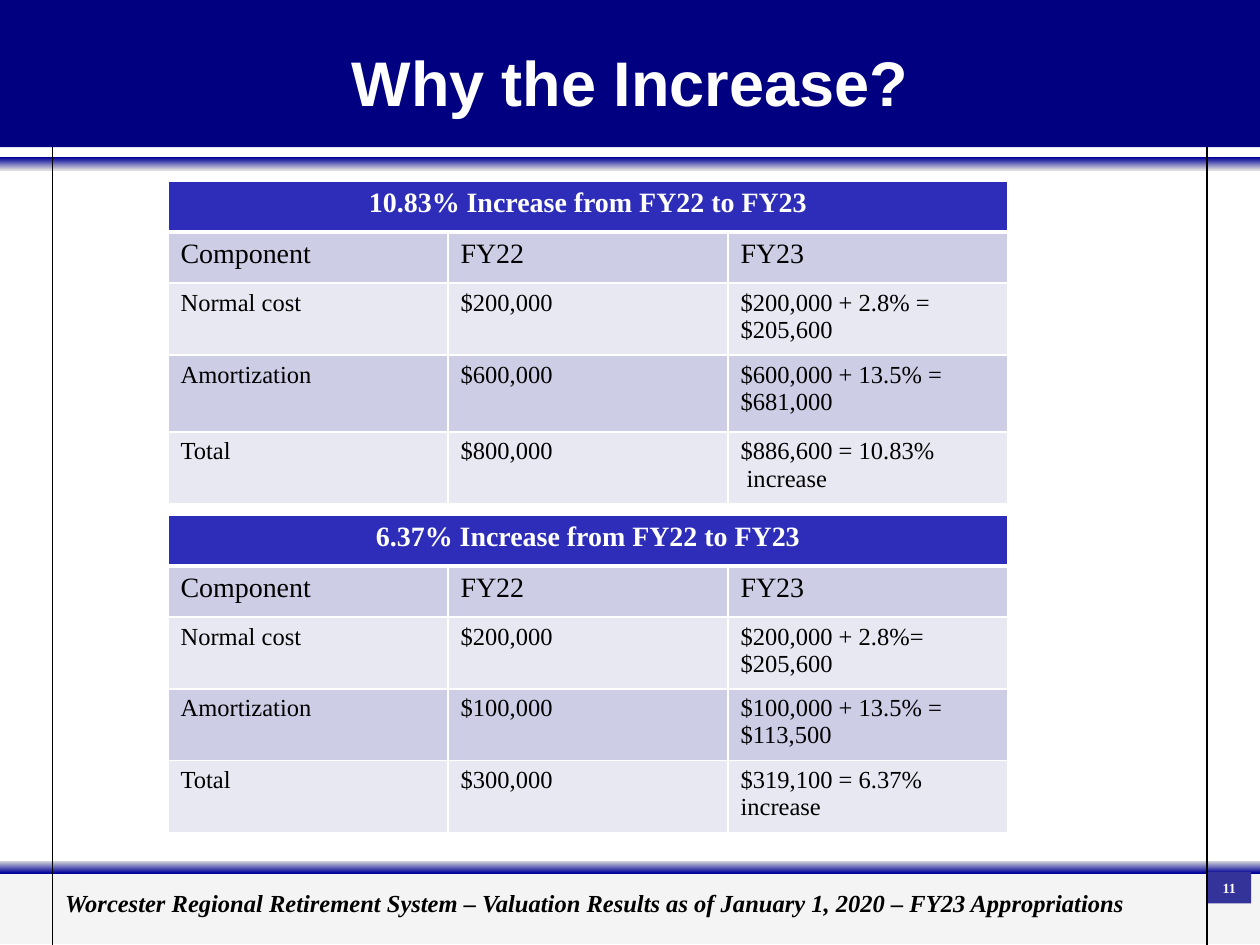
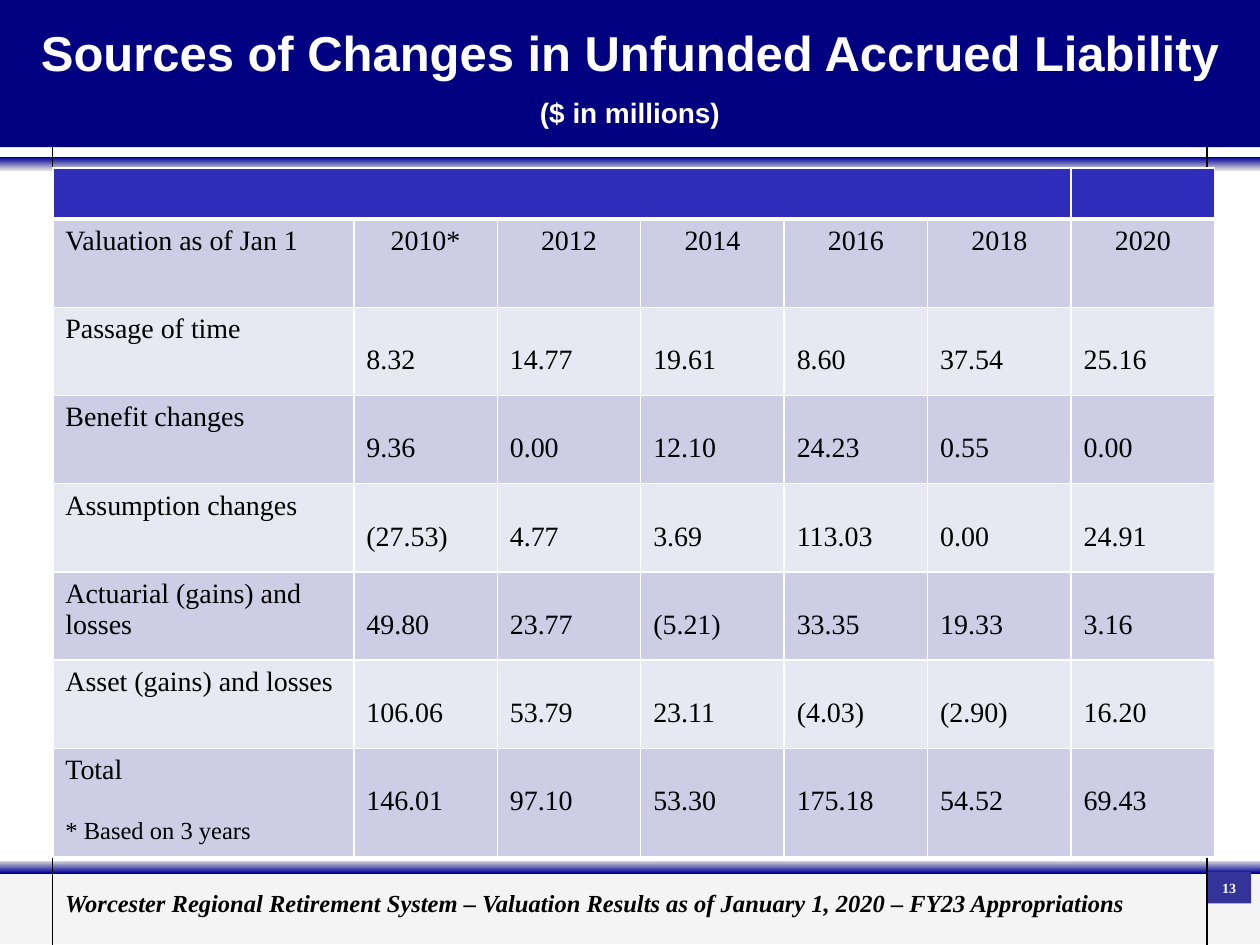
from dataclasses import dataclass

from lxml import etree
from pptx import Presentation
from pptx.dml.color import RGBColor
from pptx.enum.shapes import MSO_CONNECTOR, MSO_SHAPE
from pptx.enum.text import MSO_ANCHOR, MSO_AUTO_SIZE, PP_ALIGN
from pptx.oxml.ns import qn
from pptx.util import Pt

RECTANGLE = MSO_SHAPE.RECTANGLE
STRAIGHT = MSO_CONNECTOR.STRAIGHT
TOP, MIDDLE = MSO_ANCHOR.TOP, MSO_ANCHOR.MIDDLE
NO_FIT = MSO_AUTO_SIZE.NONE
LEFT, CENTER = PP_ALIGN.LEFT, PP_ALIGN.CENTER


@dataclass(frozen=True)
class Theme:
    title_font: str = "Arial"
    body_font: str = "Times New Roman"
    navy: str = "000080"
    blue: str = "000099"
    silver: str = "DDDDDD"
    footer_grey: str = "EAEAEA"
    number_box: str = "333399"
    header: str = "2D2DB9"
    dark_row: str = "CDCDE6"
    light_row: str = "E8E8F3"
    black: str = "000000"
    white: str = "FFFFFF"
    heading: int = 16
    body: int = 14
    page_number: int = 8


THEME = Theme()
WIDTH, HEIGHT = 720, 540
HEADER_HEIGHT = 84.2
MARGIN_LINES = (30.2, 689.8)
DECIMAL_TAB = 54
FOOTER = ("Worcester Regional Retirement System – Valuation Results as of "
          "January 1, 2020 – FY23 Appropriations")


def write(paragraph, text, size, color=THEME.black, font=THEME.body_font,
          bold=False, italic=False, align=LEFT):
    paragraph.alignment = align
    run = paragraph.add_run()
    run.text = text
    run.font.name = font
    run.font.size = Pt(size)
    run.font.bold = bold
    run.font.italic = italic
    run.font.color.rgb = RGBColor.from_string(color)


def add_grid(slide, left, top, widths, heights):
    grid = slide.shapes.add_table(len(heights), len(widths), Pt(left), Pt(top),
                                  Pt(sum(widths)), Pt(sum(heights))).table
    for column, width in zip(grid.columns, widths):
        column.width = Pt(width)
    for row_index, height in enumerate(heights):
        grid.rows[row_index].height = Pt(height)
        fill = THEME.dark_row if row_index % 2 else THEME.light_row
        edges = {"a:lnL": 1, "a:lnR": 1,
                 "a:lnT": 3 if row_index == 1 else 1,
                 "a:lnB": 3 if row_index == 0 else 1}
        for cell in grid.rows[row_index].cells:
            properties = cell._tc.get_or_add_tcPr()
            for tag, weight in edges.items():
                edge = etree.SubElement(properties, qn(tag), w=str(Pt(weight)))
                solid = etree.SubElement(edge, qn("a:solidFill"))
                etree.SubElement(solid, qn("a:srgbClr"), val=THEME.white)
            cell.fill.solid()
            cell.fill.fore_color.rgb = RGBColor.from_string(
                fill if row_index else THEME.header)
    return grid


prs = Presentation()
prs.slide_width, prs.slide_height = Pt(WIDTH), Pt(HEIGHT)
title_only = prs.slide_layouts[5]

pages = [
    ("11", 18, 51.1, [("Why the Increase?", 36)]),
    ("13", 5.8, 70.6, [("Sources of Changes in Unfunded Accrued Liability", 28),
                       ("($ in millions)", THEME.heading)]),
]
bands = [
    (0, 90, WIDTH, 7.2, (THEME.blue, THEME.silver)),
    (0, 497.5, WIDTH, 41.8, (THEME.footer_grey,)),
    (0, 491.8, WIDTH, 7.2, (THEME.silver, THEME.blue)),
    (0, 0, WIDTH, HEADER_HEIGHT, (THEME.navy,)),
    (MARGIN_LINES[1], 498.2, 25.2, 18, (THEME.number_box,)),
]

slides = []
for page_number, title_top, title_height, title_lines in pages:
    slide = prs.slides.add_slide(title_only)
    slides.append(slide)

    for left, top, width, height, colors in bands:
        band = slide.shapes.add_shape(RECTANGLE, Pt(left), Pt(top), Pt(width), Pt(height))
        band.shadow.inherit = False
        band.line.fill.background()
        if len(colors) == 2:
            band.fill.gradient()
            band.fill.gradient_angle = 270
            for stop, color in zip(band.fill.gradient_stops, colors):
                stop.color.rgb = RGBColor.from_string(color)
        else:
            band.fill.solid()
            band.fill.fore_color.rgb = RGBColor.from_string(colors[0])
        if colors == (THEME.footer_grey,):
            tint = band._element.spPr.find(".//" + qn("a:srgbClr"))
            etree.SubElement(tint, qn("a:alpha"), val="50000")
        if colors == (THEME.number_box,):
            band.text_frame.vertical_anchor = MIDDLE
            write(band.text_frame.paragraphs[0], page_number, THEME.page_number,
                  THEME.white, bold=True, align=CENTER)

    for x in MARGIN_LINES:
        margin_line = slide.shapes.add_connector(STRAIGHT, Pt(x), Pt(HEADER_HEIGHT),
                                                 Pt(x), Pt(HEIGHT))
        margin_line.line.width = Pt(0.75)
        margin_line.line.color.rgb = RGBColor.from_string(THEME.black)
        etree.SubElement(margin_line._element.spPr, qn("a:effectLst"))

    footer = slide.shapes.add_textbox(Pt(MARGIN_LINES[0]), Pt(504), Pt(648), Pt(24.5))
    footer.text_frame.word_wrap = True
    write(footer.text_frame.paragraphs[0], FOOTER, THEME.body, bold=True, italic=True)

    title = slide.shapes.title
    title.element.getparent().append(title.element)
    title.left, title.top = Pt(0), Pt(title_top)
    title.width, title.height = Pt(WIDTH), Pt(title_height)
    title_frame = title.text_frame
    title_frame.auto_size = NO_FIT
    title_frame.vertical_anchor = TOP
    title_frame.margin_top = Pt(7)
    for index, (text, size) in enumerate(title_lines):
        line = title_frame.add_paragraph() if index else title_frame.paragraphs[0]
        line.space_before = Pt(8 if index else 0)
        write(line, text, size, THEME.white, THEME.title_font, bold=True, align=CENTER)

increase_slide, liability_slide = slides

scenarios = [
    (103.4, 44, "10.83% Increase from FY22 to FY23", [
        ("Normal cost", "$200,000", "$200,000 + 2.8% = $205,600"),
        ("Amortization", "$600,000", "$600,000 + 13.5% = $681,000"),
        ("Total", "$800,000", "$886,600 = 10.83%\n increase")]),
    (294.2, 41, "6.37% Increase from FY22 to FY23", [
        ("Normal cost", "$200,000", "$200,000 + 2.8%= $205,600"),
        ("Amortization", "$100,000", "$100,000 + 13.5% = $113,500"),
        ("Total", "$300,000", "$319,100 = 6.37% increase")]),
]
for top, amortization_height, heading, components in scenarios:
    scenario = add_grid(increase_slide, 96, top, [160] * 3,
                        [29.2, 29.2, 41, amortization_height, 41])
    scenario.cell(0, 0).merge(scenario.cell(0, 2))
    write(scenario.cell(0, 0).text_frame.paragraphs[0], heading, THEME.heading,
          THEME.white, bold=True, align=CENTER)
    for row_index, row in enumerate([("Component", "FY22", "FY23")] + components, 1):
        size = THEME.heading if row_index == 1 else THEME.body
        for column_index, entry in enumerate(row):
            frame = scenario.cell(row_index, column_index).text_frame
            for index, text in enumerate(entry.split("\n")):
                paragraph = frame.add_paragraph() if index else frame.paragraphs[0]
                write(paragraph, text, size)

liability_rows = [
    ("Valuation as of Jan 1", "2010*", "2012", "2014", "2016", "2018", "2020"),
    ("Passage of time", "8.32", "14.77", "19.61", "8.60", "37.54", "25.16"),
    ("Benefit changes", "9.36", "0.00", "12.10", "24.23", "0.55", "0.00"),
    ("Assumption changes", "(27.53)", "4.77", "3.69", "113.03", "0.00", "24.91"),
    ("Actuarial (gains) and losses", "49.80", "23.77", "(5.21)", "33.35", "19.33", "3.16"),
    ("Asset (gains) and losses", "106.06", "53.79", "23.11", "(4.03)", "(2.90)", "16.20"),
    ("Total", "146.01", "97.10", "53.30", "175.18", "54.52", "69.43"),
]
liability = add_grid(liability_slide, MARGIN_LINES[0], 96, [172] + [82] * 6,
                     [29.2] + [50.4] * 6 + [62.2])
liability.cell(0, 0).merge(liability.cell(0, 5))
for row_index, row in enumerate(liability_rows, 1):
    for column_index, entry in enumerate(row):
        paragraph = liability.cell(row_index, column_index).text_frame.paragraphs[0]
        if column_index == 0:
            write(paragraph, entry, THEME.heading)
        elif row_index == 1:
            write(paragraph, entry, THEME.heading, align=CENTER)
        else:
            write(paragraph, "\t" + entry, THEME.heading)
            tabs = etree.SubElement(paragraph._p.get_or_add_pPr(), qn("a:tabLst"))
            etree.SubElement(tabs, qn("a:tab"), pos=str(Pt(DECIMAL_TAB)), algn="dec")

footnote = liability.cell(len(liability_rows), 0).text_frame.add_paragraph()
footnote.space_before = Pt(18)
write(footnote, "* Based on 3 years", THEME.body)

prs.save("out.pptx")
